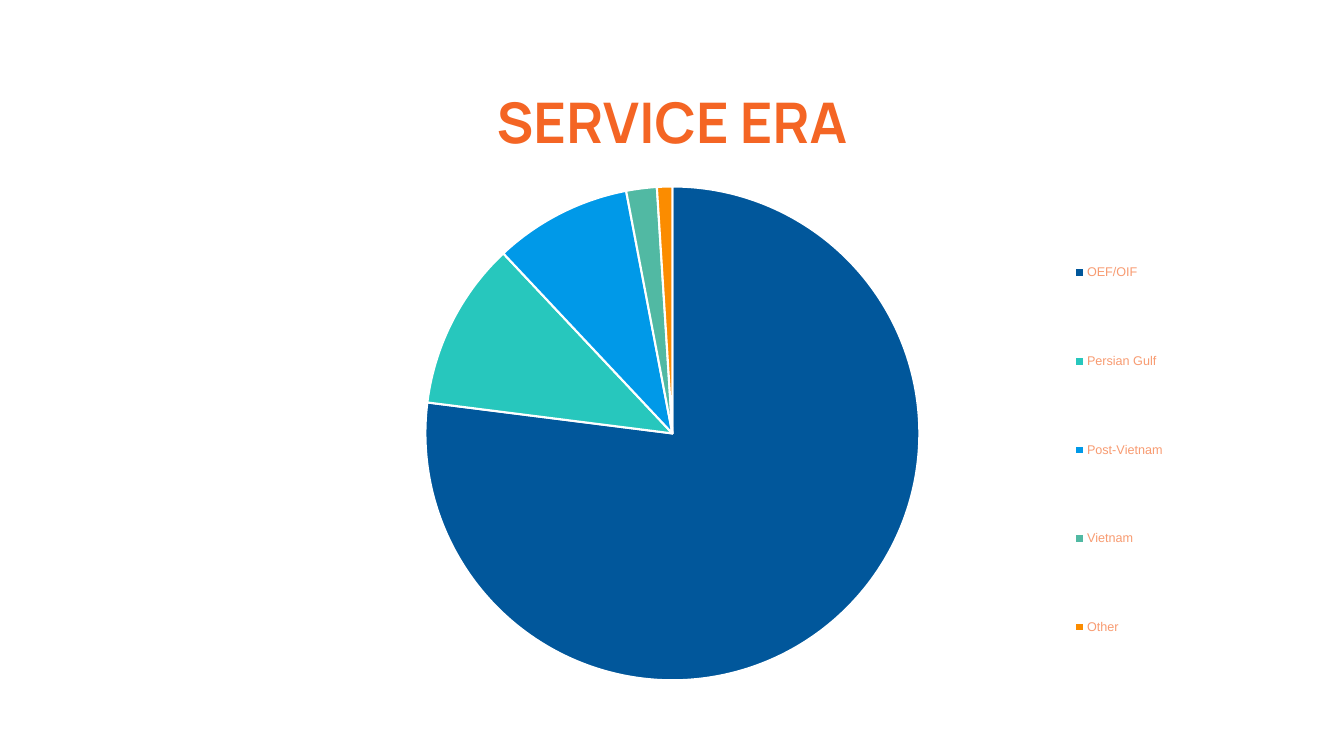
from dataclasses import dataclass

from lxml.etree import SubElement
from pptx import Presentation
from pptx.chart.chart import Chart
from pptx.chart.data import CategoryChartData
from pptx.dml.color import RGBColor
from pptx.enum.chart import XL_CHART_TYPE as ChartType, XL_LEGEND_POSITION as LegendPosition
from pptx.enum.text import MSO_ANCHOR as Anchor, PP_ALIGN as Align
from pptx.oxml.ns import qn
from pptx.slide import Slide
from pptx.util import Inches, Pt


@dataclass(frozen=True)
class Theme:
    title_font: str = "Manrope"
    chart_font: str = "Arial"
    title_size: float = 40
    chart_size: float = 10
    legend_size: float = 9
    border_width: float = 1.5
    orange: str = "F46524"
    legend_color: str = "F89B71"
    white: str = "FFFFFF"


@dataclass(frozen=True)
class Box:
    left: float
    top: float
    width: float
    height: float


@dataclass(frozen=True)
class Era:
    name: str
    share: int
    color: str


THEME = Theme()
TITLE_BOX = Box(1.25, 0.58, 10.83, 1.32)
CHART_BOX = Box(1.25, 1.72, 10.83, 5.47)
PIE_BOX = Box(4.22, 1.85, 4.9, 4.9)
LEGEND_BOX = Box(10.4, 1.9, 1.4, 5.13)
ERAS = (
    Era("OEF/OIF", 77, "01579B"),
    Era("Persian Gulf", 11, "27C7BD"),
    Era("Post-Vietnam", 9, "0099E8"),
    Era("Vietnam", 2, "51B9A3"),
    Era("Other", 1, "FB8C00"),
)


def inches(box: Box) -> tuple:
    return tuple(Inches(n) for n in (box.left, box.top, box.width, box.height))


def style_font(font, *, name: str, size: float, color: str, bold: bool = False) -> None:
    font.name = name
    font.size = Pt(size)
    font.bold = bold
    font.color.rgb = RGBColor.from_string(color)


def add_text(slide: Slide, box: Box, text: str, *, align: Align = Align.CENTER,
             line_spacing: float = 0.9, **font_format) -> None:
    frame = slide.shapes.add_textbox(*inches(box)).text_frame
    frame.word_wrap = True
    frame.vertical_anchor = Anchor.MIDDLE
    para = frame.paragraphs[0]
    para.alignment = align
    para.line_spacing = line_spacing
    span = para.add_run()
    span.text = text
    style_font(span.font, **font_format)


def place_in_chart(layout, box: Box, *, inner: bool = False) -> None:
    """Fix a chart part at a slide position, as fractions of the chart's frame."""
    manual = SubElement(layout, qn("c:manualLayout"))
    settings = {"layoutTarget": "inner"} if inner else {}
    settings |= {
        "xMode": "edge",
        "yMode": "edge",
        "x": (box.left - CHART_BOX.left) / CHART_BOX.width,
        "y": (box.top - CHART_BOX.top) / CHART_BOX.height,
        "w": box.width / CHART_BOX.width,
        "h": box.height / CHART_BOX.height,
    }
    for tag, value in settings.items():
        text = value if isinstance(value, str) else f"{value:.4f}"
        SubElement(manual, qn(f"c:{tag}")).set("val", text)


def add_legend(chart: Chart) -> None:
    chart.has_legend = True
    legend = chart.legend
    legend.position = LegendPosition.BOTTOM
    legend.include_in_layout = False
    style_font(legend.font, name=THEME.chart_font, size=THEME.legend_size,
               color=THEME.legend_color)
    element = chart.element.find(".//" + qn("c:legend"))
    layout = element.find(qn("c:layout"))
    if layout is None:
        layout = SubElement(element, qn("c:layout"))
        element.find(qn("c:legendPos")).addnext(layout)
    place_in_chart(layout, LEGEND_BOX)


def add_pie(slide: Slide) -> None:
    data = CategoryChartData()
    data.categories = [era.name for era in ERAS]
    data.add_series("Series 1", [era.share for era in ERAS])
    chart = slide.shapes.add_chart(ChartType.PIE, *inches(CHART_BOX), data).chart
    chart.has_title = False
    style_font(chart.font, name=THEME.chart_font, size=THEME.chart_size, color=THEME.orange)
    plot = chart.plots[0]
    plot.vary_by_categories = True
    for index, era in enumerate(ERAS):
        look = plot.series[0].points[index].format
        look.fill.solid()
        look.fill.fore_color.rgb = RGBColor.from_string(era.color)
        look.line.width = Pt(THEME.border_width)
        look.line.color.rgb = RGBColor.from_string(THEME.white)
    area = chart.element.find(".//" + qn("c:plotArea"))
    layout = area.find(qn("c:layout"))
    if layout is None:
        layout = SubElement(area, qn("c:layout"))
        area.insert(0, layout)
    place_in_chart(layout, PIE_BOX, inner=True)
    add_legend(chart)


def main() -> None:
    deck = Presentation()
    deck.slide_width, deck.slide_height = Inches(13.33), Inches(7.5)
    page = deck.slides.add_slide(deck.slide_layouts[6])
    add_text(page, TITLE_BOX, "SERVICE ERA", name=THEME.title_font,
             size=THEME.title_size, color=THEME.orange, bold=True)
    add_pie(page)
    deck.save("out.pptx")


if __name__ == "__main__":
    main()
